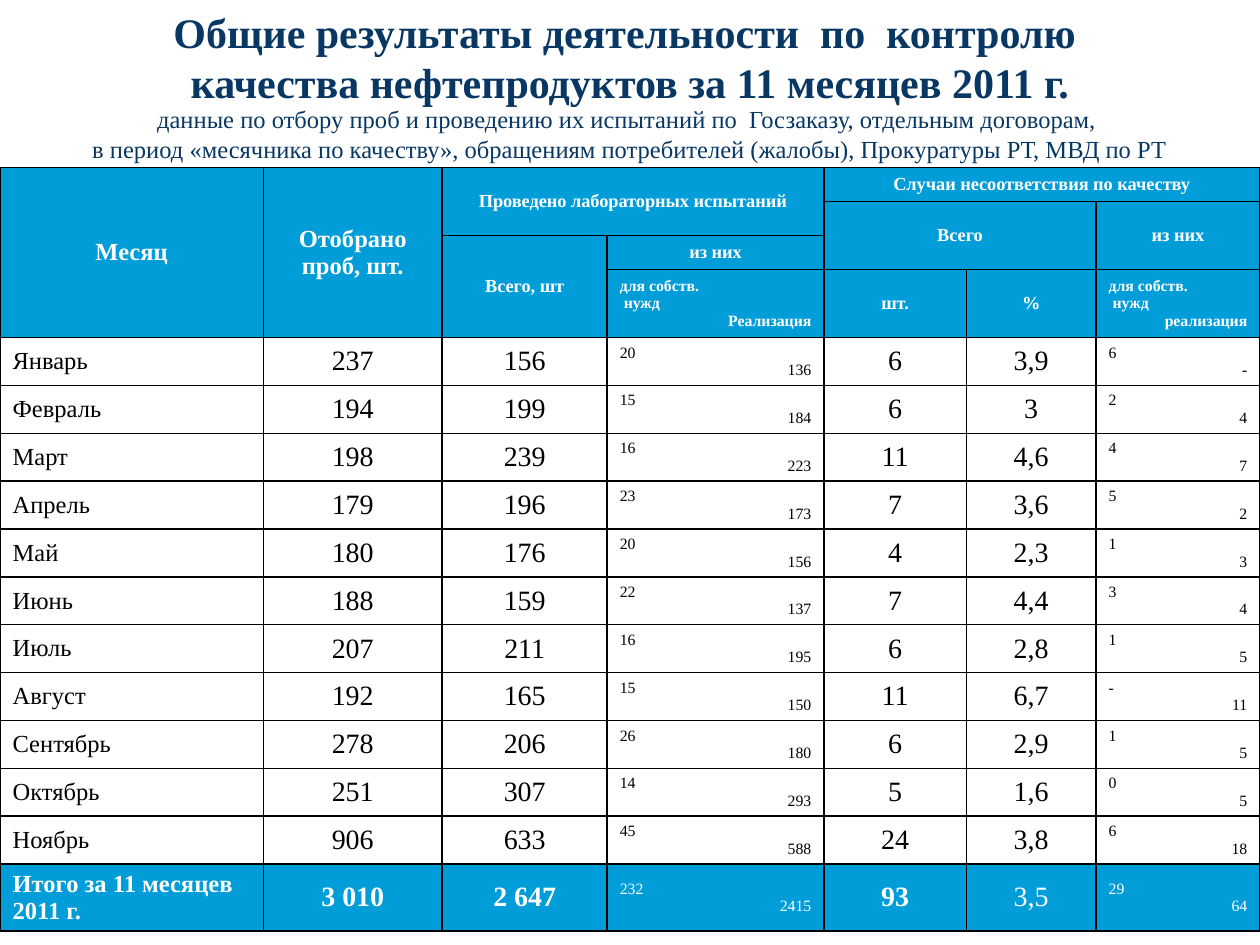
from lxml.etree import SubElement
from pptx import Presentation
from pptx.dml.color import RGBColor
from pptx.enum.text import MSO_ANCHOR, MSO_AUTO_SIZE, PP_ALIGN
from pptx.oxml.ns import qn
from pptx.util import Inches, Pt

COLORS = {"navy": "083763", "blue": "009DD9", "white": "FFFFFF", "black": "000000"}
FONT = "Times New Roman"
LEFT, CENTER, RIGHT = PP_ALIGN.LEFT, PP_ALIGN.CENTER, PP_ALIGN.RIGHT

TITLE = ["Общие результаты деятельности  по  контролю ",
         "качества нефтепродуктов за 11 месяцев 2011 г."]
SUBTITLE = [
    "данные по отбору проб и проведению их испытаний по  Госзаказу, отдельным договорам, ",
    "в период «месячника по качеству», обращениям потребителей (жалобы), Прокуратуры РТ, МВД по РТ",
]

COLUMN_WIDTHS = [2.09, 1.42, 1.31, 1.72, 1.13, 1.03, 1.3]
HEADER_HEIGHTS = [0.27, 0.27, 0.27, 0.54]
MONTH_HEIGHT, TOTAL_HEIGHT = 0.38, 0.53
SPLIT_COLUMNS = (3, 6)

# row, column, rows spanned, columns spanned, text, size
HEADERS = [
    (0, 0, 4, 1, "Месяц", 14),
    (0, 1, 4, 1, "Отобрано проб, шт.", 14),
    (0, 2, 2, 2, "Проведено лабораторных испытаний", 10.5),
    (0, 4, 1, 3, "Случаи несоответствия по качеству", 10.5),
    (1, 4, 2, 2, "Всего", 10.5),
    (1, 6, 2, 1, "из них", 10.5),
    (2, 2, 2, 1, "Всего, шт", 10.5),
    (2, 3, 1, 1, "из них", 10.5),
    (3, 4, 1, 1, "шт.", 10.5),
    (3, 5, 1, 1, "%", 10.5),
]
SPLIT_HEADERS = {3: "Реализация", 6: "реализация"}

# A pair holds own needs and sales
MONTHS = [
    ("Январь", "237", "156", ("20", "136"), "6", "3,9", ("6", "-")),
    ("Февраль", "194", "199", ("15", "184"), "6", "3", ("2", "4")),
    ("Март", "198", "239", ("16", "223"), "11", "4,6", ("4", "7")),
    ("Апрель", "179", "196", ("23", "173"), "7", "3,6", ("5", "2")),
    ("Май", "180", "176", ("20", "156"), "4", "2,3", ("1", "3")),
    ("Июнь", "188", "159", ("22", "137"), "7", "4,4", ("3", "4")),
    ("Июль", "207", "211", ("16", "195"), "6", "2,8", ("1", "5")),
    ("Август", "192", "165", ("15", "150"), "11", "6,7", ("-", "11")),
    ("Сентябрь", "278", "206", ("26", "180"), "6", "2,9", ("1", "5")),
    ("Октябрь", "251", "307", ("14", "293"), "5", "1,6", ("0", "5")),
    ("Ноябрь", "906", "633", ("45", "588"), "24", "3,8", ("6", "18")),
]
TOTAL_LABEL = ["Итого за 11 месяцев", "2011 г."]
TOTAL = ("3 010", "2 647", ("232", "2415"), "93", "3,5", ("29", "64"))


def write(text_frame, lines, size, color, bold=False, alignments=None):
    """Write one paragraph per line, centred unless alignments are given."""
    for index, line in enumerate(lines):
        paragraph = text_frame.paragraphs[0] if index == 0 else text_frame.add_paragraph()
        paragraph.alignment = alignments[index] if alignments else CENTER
        run = paragraph.add_run()
        run.text = line
        run.font.name = FONT
        run.font.size = Pt(size)
        run.font.bold = bold
        run.font.color.rgb = RGBColor.from_string(COLORS[color])


def place_heading(shape, left, top, width, height, lines, size, bold=False):
    shape.left, shape.top = Inches(left), Inches(top)
    shape.width, shape.height = Inches(width), Inches(height)
    text_frame = shape.text_frame
    text_frame.word_wrap = True
    text_frame.auto_size = MSO_AUTO_SIZE.NONE
    text_frame.vertical_anchor = MSO_ANCHOR.TOP
    write(text_frame, lines, size, "navy", bold)


def style_cell(cell, fill):
    """Set fill, thin black borders and a small size for the empty paragraph."""
    cell.vertical_anchor = MSO_ANCHOR.MIDDLE
    properties = cell._tc.get_or_add_tcPr()
    for side in ("a:lnL", "a:lnR", "a:lnT", "a:lnB"):
        line = SubElement(properties, qn(side), w=str(Pt(1)))
        solid = SubElement(line, qn("a:solidFill"))
        SubElement(solid, qn("a:srgbClr"), val=COLORS["black"])
    cell.fill.solid()
    cell.fill.fore_color.rgb = RGBColor.from_string(COLORS[fill])
    if cell.is_spanned:
        SubElement(cell.text_frame.paragraphs[0]._p, qn("a:endParaRPr"), sz="900")


def fill_header(table):
    for row, column, rows, columns, text, size in HEADERS:
        cell = table.cell(row, column)
        if rows * columns > 1:
            cell.merge(table.cell(row + rows - 1, column + columns - 1))
        write(cell.text_frame, [text], size, "white", bold=True)
    for column, label in SPLIT_HEADERS.items():
        write(table.cell(3, column).text_frame, ["для собств.", " нужд", label],
              9, "white", True, [LEFT, LEFT, RIGHT])


def fill_values(table, row, values, color, bold_columns=()):
    for column, value in enumerate(values, start=1):
        text_frame = table.cell(row, column).text_frame
        if column in SPLIT_COLUMNS:
            write(text_frame, value, 9, color, alignments=[LEFT, RIGHT])
        else:
            write(text_frame, [value], 16, color, column in bold_columns)


def add_results_table(slide, left, top, width):
    heights = HEADER_HEIGHTS + [MONTH_HEIGHT] * len(MONTHS) + [TOTAL_HEIGHT]
    table = slide.shapes.add_table(
        len(heights), len(COLUMN_WIDTHS),
        Inches(left), Inches(top), Inches(width), Inches(sum(heights))).table
    table.first_row = table.horz_banding = False
    for column, column_width in zip(table.columns, COLUMN_WIDTHS):
        column.width = Inches(column_width)
    for row, height in zip(table.rows, heights):
        row.height = Inches(height)

    fill_header(table)
    first_month, total_row = len(HEADER_HEIGHTS), len(heights) - 1
    for row, (month, *values) in enumerate(MONTHS, start=first_month):
        write(table.cell(row, 0).text_frame, [month], 14, "black", alignments=[LEFT])
        fill_values(table, row, values, "black")
    write(table.cell(total_row, 0).text_frame, TOTAL_LABEL, 14, "white", True, [LEFT, LEFT])
    fill_values(table, total_row, TOTAL, "white", bold_columns=(1, 2, 4))

    for row in range(len(heights)):
        fill = "white" if first_month <= row < total_row else "blue"
        for column in range(len(COLUMN_WIDTHS)):
            style_cell(table.cell(row, column), fill)


def main():
    presentation = Presentation()
    presentation.slide_width, presentation.slide_height = Inches(10), Inches(7.5)
    slide = presentation.slides.add_slide(presentation.slide_layouts[5])
    place_heading(slide.shapes.title, 0, 0, 10, 0.78, TITLE, 24, bold=True)
    subtitle = slide.shapes.add_textbox(0, 0, 0, 0)
    place_heading(subtitle, 0, 0.78, 10, 0.7, SUBTITLE, 14)
    add_results_table(slide, 0, 1.33, 10)
    presentation.save("out.pptx")


if __name__ == "__main__":
    main()
